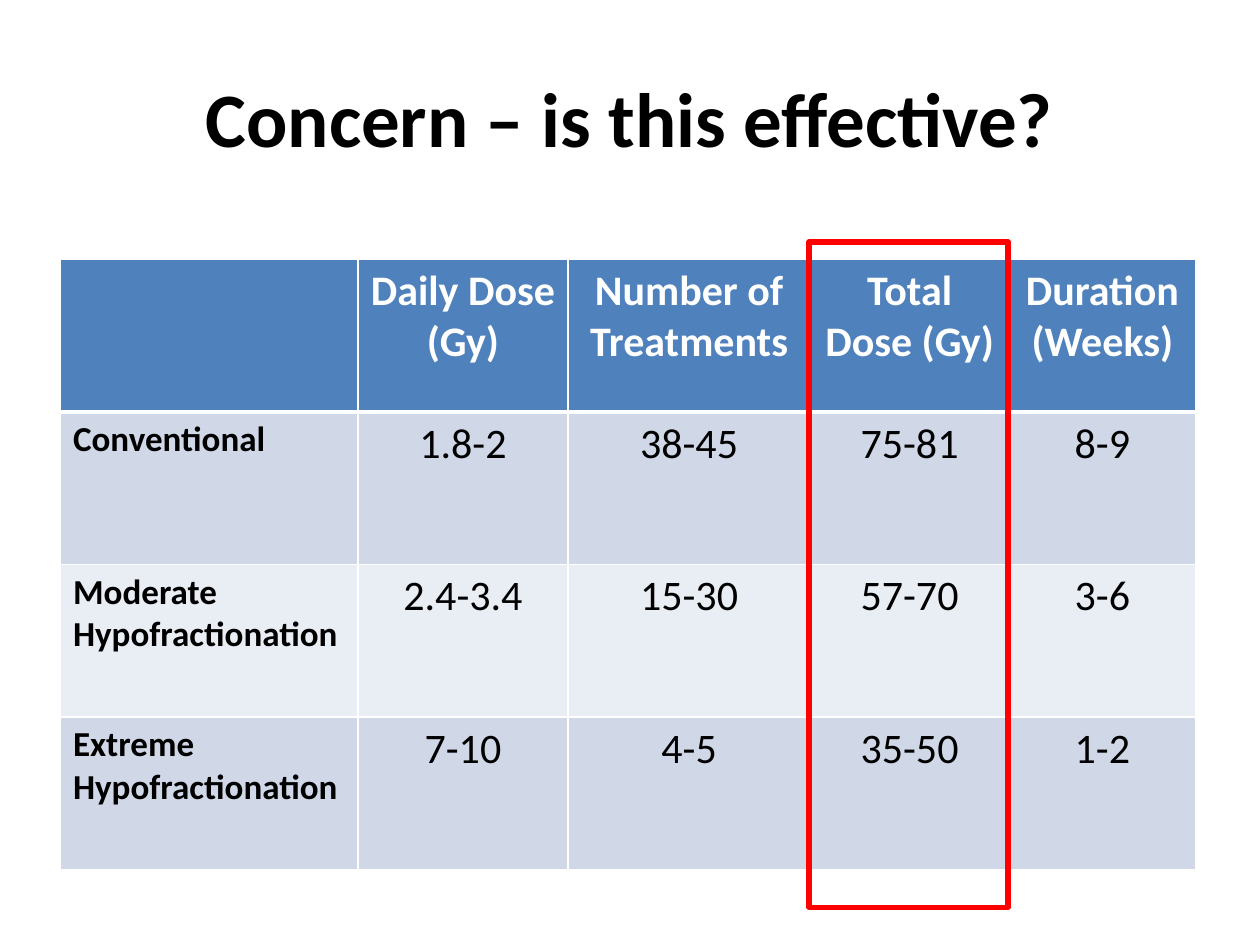
from lxml import etree
from pptx import Presentation
from pptx.dml.color import RGBColor
from pptx.enum.shapes import MSO_SHAPE
from pptx.enum.text import MSO_ANCHOR, PP_ALIGN
from pptx.oxml.ns import qn
from pptx.util import Inches, Pt

RECT = MSO_SHAPE.RECTANGLE
MIDDLE = MSO_ANCHOR.MIDDLE
LEFT, CENTER = PP_ALIGN.LEFT, PP_ALIGN.CENTER

FONT = "Calibri"
BLACK = RGBColor(0x00, 0x00, 0x00)
WHITE = RGBColor(0xFF, 0xFF, 0xFF)
BLUE = RGBColor(0x4F, 0x81, 0xBD)
BANDS = (RGBColor(0xD0, 0xD8, 0xE8), RGBColor(0xE9, 0xED, 0xF4))
RED = RGBColor(0xFF, 0x00, 0x00)

WIDTHS = (2.36, 1.67, 1.92, 1.58, 1.48)
HEIGHT = 1.21
ROWS = (
    ("", "Daily Dose (Gy)", "Number of Treatments", "Total Dose (Gy)",
     "Duration (Weeks)"),
    ("Conventional", "1.8-2", "38-45", "75-81", "8-9"),
    ("Moderate Hypofractionation", "2.4-3.4", "15-30", "57-70", "3-6"),
    ("Extreme Hypofractionation", "7-10", "4-5", "35-50", "1-2"),
)


def add_text(frame, text, size, color, bold, align):
    para = frame.paragraphs[0]
    para.alignment = align
    run = para.add_run()
    run.text = text
    font = run.font
    font.name, font.size, font.bold = FONT, Pt(size), bold
    font.color.rgb = color


def add_title(slide, text):
    box = slide.shapes.add_textbox(
        Inches(0.5), Inches(0.3), Inches(9), Inches(1.25))
    frame = box.text_frame
    frame.word_wrap = True
    frame.vertical_anchor = MIDDLE
    add_text(frame, text, 44, BLACK, True, CENTER)


def set_edges(cell, widths):
    props = cell._tc.get_or_add_tcPr()
    for spot, (side, width) in enumerate(widths.items()):
        line = etree.Element(qn(f"a:{side}"), w=str(Pt(width)))
        fill = etree.SubElement(line, qn("a:solidFill"))
        etree.SubElement(fill, qn("a:srgbClr"), val=str(WHITE))
        props.insert(spot, line)  # edges come before the fill


def add_grid(slide):
    frame = slide.shapes.add_table(
        len(ROWS), len(WIDTHS), Inches(0.48), Inches(2.06),
        Inches(sum(WIDTHS)), Inches(HEIGHT * len(ROWS)))
    table = frame.table
    for col, width in zip(table.columns, WIDTHS):
        col.width = Inches(width)
    for r, row in enumerate(ROWS):
        table.rows[r].height = Inches(HEIGHT)
        head = r == 0
        for c, text in enumerate(row):
            cell = table.cell(r, c)
            cell.fill.solid()
            cell.fill.fore_color.rgb = BLUE if head else BANDS[(r - 1) % 2]
            set_edges(cell, {"lnL": 1, "lnR": 1, "lnT": 3 if r == 1 else 1,
                             "lnB": 3 if head else 1})
            if text:
                label = c == 0
                add_text(cell.text_frame, text, 20 if label else 24,
                         WHITE if head else BLACK, head or label,
                         LEFT if label else CENTER)


def add_frame(slide, left, top, width, height):
    shape = slide.shapes.add_shape(
        RECT, Inches(left), Inches(top), Inches(width), Inches(height))
    shape.shadow.inherit = False
    shape.fill.background()
    shape.line.color.rgb = RED
    shape.line.width = Pt(3)
    etree.SubElement(shape.line._get_or_add_ln(), qn("a:round"))


def main():
    deck = Presentation()
    deck.slide_width, deck.slide_height = Inches(10), Inches(7.5)
    slide = deck.slides.add_slide(deck.slide_layouts[6])

    # Heading and dose table
    add_title(slide, "Concern – is this effective?")
    add_grid(slide)

    # Highlight around the total dose column
    add_frame(slide, 6.42, 1.92, 1.58, 5.28)

    deck.save("out.pptx")


if __name__ == "__main__":
    main()
